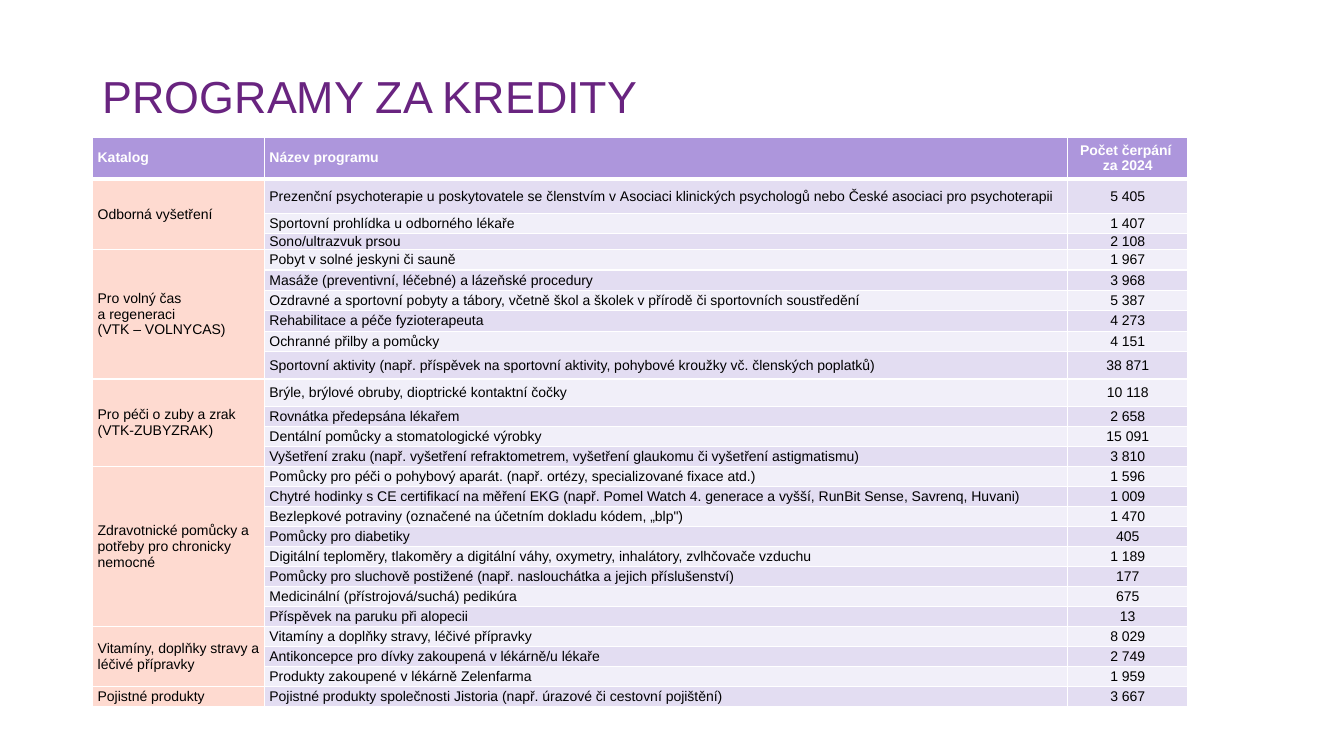
from lxml.etree import SubElement
from pptx import Presentation
from pptx.dml.color import RGBColor
from pptx.enum.text import MSO_ANCHOR as Anchor, PP_ALIGN as Align
from pptx.oxml.ns import qn
from pptx.util import Pt

COLORS = {"title": "692480", "header": "AD96DC", "catalog": "FEDAD0", "dark": "E3DDF2",
          "light": "F1EFF9", "white": "FFFFFF", "black": "000000"}
FONT = "Arial"
HARD_SPACE = chr(160)
COLUMN_WIDTHS = [122.7, 573.7, 86]
ROW_HEIGHTS = [30, 24.5, 14.6, 10.8] + [14.6] * 5 + [19.4, 19.8] + [14.3] * 15
HEADERS = [["Katalog"], ["Název programu"], ["Počet čerpání ", "za 2024"]]
CATALOGS = [
    (["Odborná vyšetření"], [
        (f"Prezenční psychoterapie u poskytovatele se členstvím v{HARD_SPACE}Asociaci klinických "
         "psychologů nebo České asociaci pro psychoterapii", "5 405"),
        (f"Sportovní prohlídka u{HARD_SPACE}odborného lékaře", "1 407"),
        ("Sono/ultrazvuk prsou", "2 108"),
    ]),
    ([f"Pro volný čas a{HARD_SPACE}regeneraci", "(VTK – VOLNYCAS)"], [
        ("Pobyt v solné jeskyni či sauně", "1 967"),
        ("Masáže (preventivní, léčebné) a lázeňské procedury", "3 968"),
        ("Ozdravné a sportovní pobyty a tábory, včetně škol a školek v přírodě "
         "či sportovních soustředění", "5 387"),
        ("Rehabilitace a péče fyzioterapeuta", "4 273"),
        ("Ochranné přilby a pomůcky", "4 151"),
        ("Sportovní aktivity (např. příspěvek na sportovní aktivity, pohybové kroužky "
         "vč. členských poplatků)", "38 871"),
    ]),
    (["Pro péči o zuby a zrak", "(VTK-ZUBYZRAK)"], [
        ("Brýle, brýlové obruby, dioptrické kontaktní čočky", "10 118"),
        ("Rovnátka předepsána lékařem", "2 658"),
        ("Dentální pomůcky a stomatologické výrobky", "15 091"),
        ("Vyšetření zraku (např. vyšetření refraktometrem, vyšetření glaukomu "
         "či vyšetření astigmatismu)", "3 810"),
    ]),
    (["Zdravotnické pomůcky a potřeby pro chronicky nemocné"], [
        (f"Pomůcky pro péči o{HARD_SPACE}pohybový aparát. (např. ortézy, specializované fixace "
         "atd.)", "1 596"),
        ("Chytré hodinky s CE certifikací na měření EKG (např. Pomel Watch 4. generace a vyšší, "
         "RunBit Sense, Savrenq, Huvani)", "1 009"),
        ("Bezlepkové potraviny (označené na účetním dokladu kódem, „blp\")", "1 470"),
        ("Pomůcky pro diabetiky", "405"),
        ("Digitální teploměry, tlakoměry a digitální váhy, oxymetry, inhalátory, "
         "zvlhčovače vzduchu", "1 189"),
        ("Pomůcky pro sluchově postižené (např. naslouchátka a jejich příslušenství)", "177"),
        ("Medicinální (přístrojová/suchá) pedikúra", "675"),
        ("Příspěvek na paruku při alopecii", "13"),
    ]),
    (["Vitamíny, doplňky stravy a léčivé přípravky"], [
        ("Vitamíny a doplňky stravy, léčivé přípravky", "8 029"),
        (f"Antikoncepce pro dívky zakoupená v{HARD_SPACE}lékárně/u lékaře", "2 749"),
        (f"Produkty zakoupené v{HARD_SPACE}lékárně Zelenfarma", "1 959"),
    ]),
    (["Pojistné produkty"], [
        ("Pojistné produkty společnosti Jistoria (např. úrazové či cestovní pojištění)", "3 667"),
    ]),
]


def add_span(para, text, size, color, bold=False):
    """Add one formatted run to a paragraph."""
    span = para.add_run()
    span.text = text
    span.font.name = FONT
    span.font.size = Pt(size)
    span.font.bold = bold
    span.font.color.rgb = RGBColor.from_string(COLORS[color])


def set_borders(cell, top=1, bottom=1):
    """Draw white borders around a cell."""
    properties = cell._tc.get_or_add_tcPr()
    for side, width in (("L", 1), ("R", 1), ("T", top), ("B", bottom)):
        line = SubElement(properties, qn(f"a:ln{side}"), w=str(Pt(width)))
        fill = SubElement(line, qn("a:solidFill"))
        SubElement(fill, qn("a:srgbClr"), val=COLORS["white"])


def style_cell(cell, fill, top=1, bottom=1):
    """Set the borders, fill, margins and anchor of a cell."""
    set_borders(cell, top, bottom)
    cell.fill.solid()
    cell.fill.fore_color.rgb = RGBColor.from_string(COLORS[fill])
    cell.margin_left = cell.margin_right = Pt(3.6)
    cell.margin_top = cell.margin_bottom = Pt(0)
    cell.vertical_anchor = Anchor.MIDDLE


def write_cell(cell, lines, centered, color="black", bold=False):
    """Write lines as paragraphs of a cell."""
    frame = cell.text_frame
    for index, line in enumerate(lines):
        para = frame.add_paragraph() if index else frame.paragraphs[0]
        para.alignment = Align.CENTER if centered else Align.LEFT
        add_span(para, line, 10, color, bold)


def place_title(page, left, top, width, height):
    """Move and fill the title placeholder."""
    box = page.shapes.title
    box.left, box.top, box.width, box.height = Pt(left), Pt(top), Pt(width), Pt(height)
    box.text_frame.vertical_anchor = Anchor.MIDDLE
    para = box.text_frame.paragraphs[0]
    para.alignment = Align.LEFT
    para.line_spacing = 0.9
    add_span(para, "PROGRAMY ZA KREDITY", 32, "title")


def place_programs(page, left, top):
    """Build the table of programs grouped by catalog."""
    frame = page.shapes.add_table(len(ROW_HEIGHTS), len(COLUMN_WIDTHS), Pt(left), Pt(top),
                                  Pt(sum(COLUMN_WIDTHS)), Pt(sum(ROW_HEIGHTS)))
    table = frame.table
    for column, width in zip(table.columns, COLUMN_WIDTHS):
        column.width = Pt(width)
    for row, height in zip(table.rows, ROW_HEIGHTS):
        row.height = Pt(height)
    for column, lines in enumerate(HEADERS):
        cell = table.cell(0, column)
        style_cell(cell, "header", bottom=3)
        write_cell(cell, lines, column == 2, "white", True)
    row = 1
    for catalog, programs in CATALOGS:
        first = row
        for program, count in programs:
            band = "dark" if row % 2 else "light"
            for column, fill in enumerate(["catalog", band, band]):
                style_cell(table.cell(row, column), fill, top=3 if row == 1 else 1)
            write_cell(table.cell(row, 1), [program], False)
            write_cell(table.cell(row, 2), [count], True)
            row += 1
        write_cell(table.cell(first, 0), catalog, False)
        if len(programs) > 1:
            table.cell(first, 0).merge(table.cell(row - 1, 0))


def main():
    """Build and save the deck."""
    deck = Presentation()
    deck.slide_width, deck.slide_height = Pt(960), Pt(540)
    page = deck.slides.add_slide(deck.slide_layouts[5])
    place_title(page, 66.2, 39.9, 643.7, 61.2)
    place_programs(page, 66.2, 98)
    deck.save("out.pptx")


if __name__ == "__main__":
    main()
